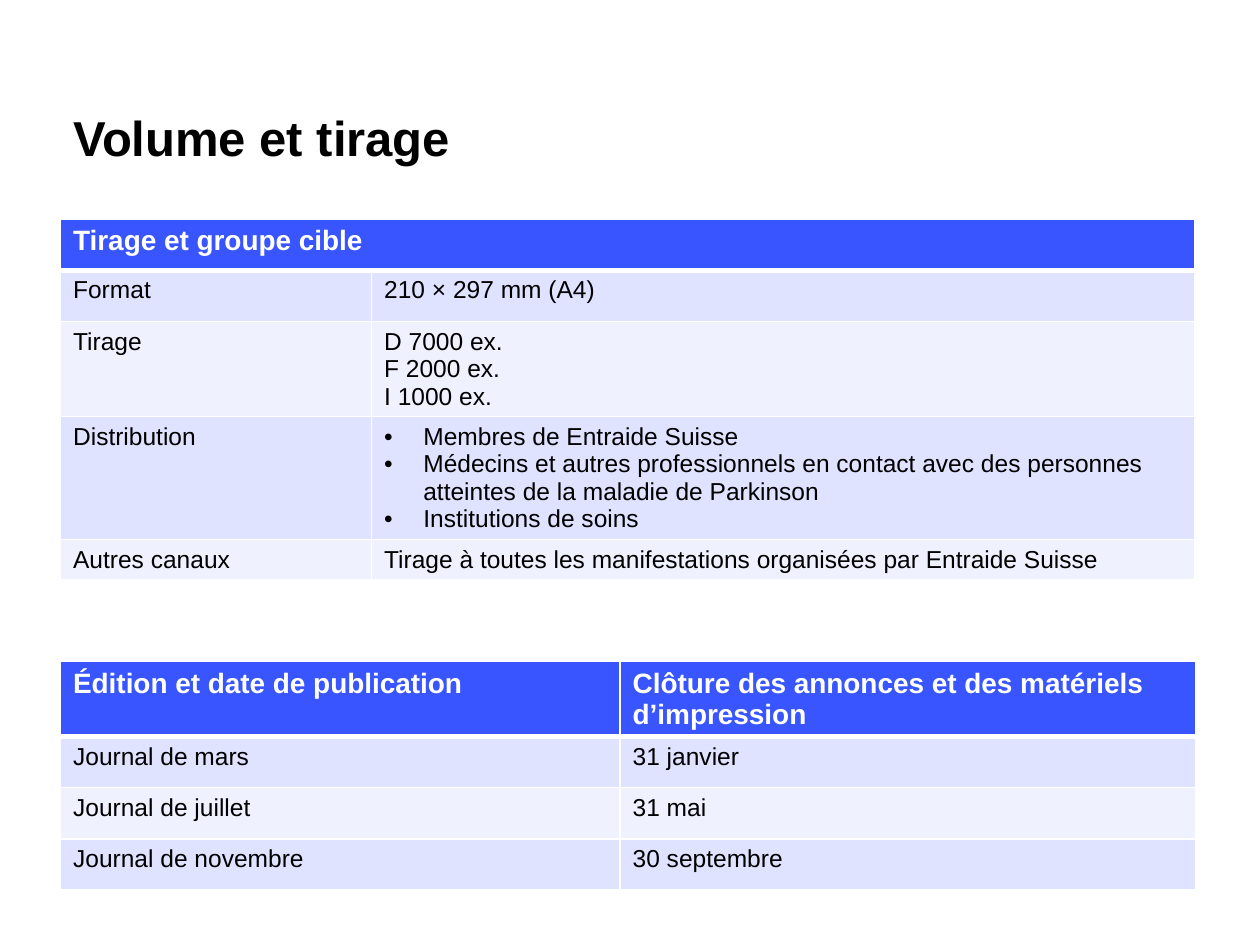
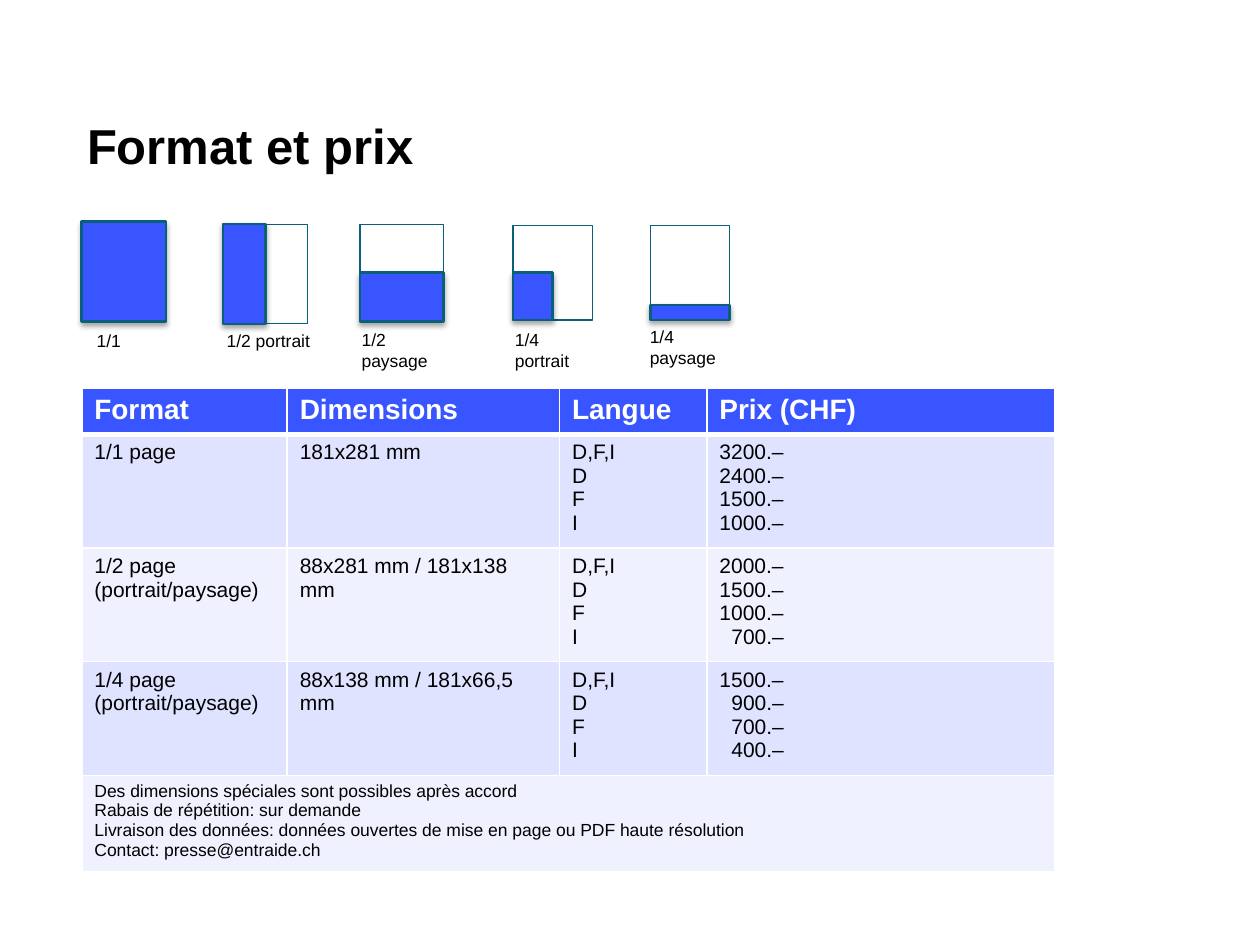
from lxml import etree
from pptx import Presentation
from pptx.dml.color import RGBColor
from pptx.enum.shapes import MSO_SHAPE
from pptx.enum.text import MSO_ANCHOR, MSO_AUTO_SIZE, PP_ALIGN
from pptx.oxml.ns import qn
from pptx.util import Cm, Pt

RECTANGLE = MSO_SHAPE.RECTANGLE
MIDDLE = MSO_ANCHOR.MIDDLE
NO_FIT = MSO_AUTO_SIZE.NONE
LEFT = PP_ALIGN.LEFT

FONT = "Arial"
BLACK, WHITE = "000000", "FFFFFF"
BLUE, TEAL = "3855FF", "0A607B"
BANDS = ("F0F1FF", "DFE3FF")
TITLE_ONLY = 5

CIRCULATION = [
    ["Tirage et groupe cible", ""],
    ["Format", "210 × 297 mm (A4)"],
    ["Tirage", "D 7000 ex.\nF 2000 ex.\nI 1000 ex."],
    ["Distribution",
     "•Membres de Entraide Suisse\n"
     "•Médecins et autres professionnels en contact avec des personnes "
     "atteintes de la maladie de Parkinson\n"
     "•Institutions de soins"],
    ["Autres canaux",
     "Tirage à toutes les manifestations organisées par Entraide Suisse"],
]
DEADLINES = [
    ["Édition et date de publication",
     "Clôture des annonces et des matériels d’impression"],
    ["Journal de mars", "31 janvier"],
    ["Journal de juillet", "31 mai"],
    ["Journal de novembre", "30 septembre"],
]
LANGUAGES = "D,F,I\nD\nF\nI"
PRICES = [
    ["Format", "Dimensions", "Langue", "Prix (CHF)"],
    ["1/1 page", "181x281 mm", LANGUAGES,
     "3200.–\n2400.–\n1500.–\n1000.–"],
    ["1/2 page (portrait/paysage)", "88x281 mm / 181x138 mm", LANGUAGES,
     "2000.–\n1500.–\n1000.–\n700.–"],
    ["1/4 page (portrait/paysage)", "88x138 mm / 181x66,5 mm", LANGUAGES,
     "1500.–\n900.–\n700.–\n400.–"],
    ["Des dimensions spéciales sont possibles après accord\n"
     "Rabais de répétition: sur demande\n"
     "Livraison des données: données ouvertes de mise en page ou PDF haute résolution\n"
     "Contact: presse@entraide.ch", "", "", ""],
]
# label, page box, share of the page taken by the advert, label left, top, width
AD_FORMATS = [
    ("1/1", (1.65, 4.47, 1.7, 2.01), (1, 1), (1.7, 6.53, 1.7)),
    ("1/2 portrait", (4.5, 4.52, 1.7, 2.01), (0.5, 1), (4.32, 6.53, 2.24)),
    ("1/2 paysage", (7.26, 4.52, 1.68, 1.96), (1, 0.5), (7.04, 6.5, 2.2)),
    ("1/4 portrait", (10.34, 4.55, 1.6, 1.9), (0.5, 0.5), (10.13, 6.5, 2.01)),
    ("1/4 paysage", (13.11, 4.55, 1.6, 1.9), (1, 0.16), (12.85, 6.45, 2.01)),
]


def color(value):
    return RGBColor.from_string(value)


def add_span(para, text, size, ink=BLACK, bold=False):
    span = para.add_run()
    span.text = text
    span.font.name = FONT
    span.font.size = Pt(size)
    span.font.bold = bold
    span.font.color.rgb = color(ink)


def set_indent(para, left, first=0):
    props = para._p.get_or_add_pPr()
    props.set("marL", str(Cm(left)))
    props.set("indent", str(Cm(first)))
    return props


def add_title_page(deck, text, left, top, width, height):
    page = deck.slides.add_slide(deck.slide_layouts[TITLE_ONLY])
    title = page.shapes.title
    title.left, title.top = Cm(left), Cm(top)
    title.width, title.height = Cm(width), Cm(height)
    frame = title.text_frame
    frame.auto_size = NO_FIT
    frame.vertical_anchor = MIDDLE
    para = frame.paragraphs[0]
    para.alignment = LEFT
    add_span(para, text, 28, bold=True)
    return page


# Tables
def set_borders(cell, top, bottom):
    props = cell._tc.get_or_add_tcPr()
    sides = {"a:lnL": 1, "a:lnR": 1, "a:lnT": top, "a:lnB": bottom}
    for place, (side, width) in enumerate(sides.items()):
        line = etree.Element(qn(side), w=str(Pt(width)))
        fill = etree.SubElement(line, qn("a:solidFill"))
        etree.SubElement(fill, qn("a:srgbClr"), val=WHITE)
        props.insert(place, line)


def fill_cell(cell, text, size, ink, bold):
    frame = cell.text_frame
    for number, line in enumerate(text.split("\n")):
        para = frame.add_paragraph() if number else frame.paragraphs[0]
        if line.startswith("•"):
            props = set_indent(para, 0.79, -0.79)
            etree.SubElement(props, qn("a:buFont"), typeface=FONT)
            etree.SubElement(props, qn("a:buChar"), char="•")
            line = line[1:]
        if line:
            add_span(para, line, size, ink, bold)


def add_grid(page, left, top, widths, heights, rows, size):
    frame = page.shapes.add_table(len(rows), len(widths), Cm(left), Cm(top),
                                  Cm(sum(widths)), Cm(sum(heights)))
    table = frame.table
    for column, width in zip(table.columns, widths):
        column.width = Cm(width)
    for index, (texts, height) in enumerate(zip(rows, heights)):
        table.rows[index].height = Cm(height)
        header = index == 0
        # A row with one text runs over the whole width
        full_width = not any(texts[1:])
        text_size = 16 if header else 10 if full_width else size
        for place, text in enumerate(texts):
            cell = table.cell(index, place)
            cell.fill.solid()
            cell.fill.fore_color.rgb = color(BLUE if header else BANDS[index % 2])
            set_borders(cell, 3 if index == 1 else 1, 3 if header else 1)
            fill_cell(cell, text, text_size, WHITE if header else BLACK, header)
        if full_width:
            table.cell(index, 0).merge(table.cell(index, len(widths) - 1))
    return table


def align_prices(table):
    for row in list(table.rows)[1:-1]:
        for para in row.cells[3].text_frame.paragraphs:
            if len(para.text) < len("1000.–"):
                set_indent(para, 0.24)


# Advert formats
def add_box(shapes, left, top, width, height, line_width, fill=None):
    box = shapes.add_shape(RECTANGLE, Cm(left), Cm(top), Cm(width), Cm(height))
    box.shadow.inherit = False
    box.line.color.rgb = color(TEAL)
    box.line.width = Pt(line_width)
    if fill:
        box.fill.solid()
        box.fill.fore_color.rgb = color(fill)
    else:
        box.fill.background()
    return box


def add_shadow(box):
    effects = box._element.spPr.find(qn("a:effectLst"))
    shadow = etree.SubElement(effects, qn("a:outerShdw"), blurRad=str(Pt(3.1)),
                              dist=str(Pt(1.8)), dir="5400000", rotWithShape="0")
    ink = etree.SubElement(shadow, qn("a:srgbClr"), val=BLACK)
    etree.SubElement(ink, qn("a:alpha"), val="35000")


def add_ad_format(page, label, sheet, share, label_place):
    left, top, width, height = sheet
    shapes = page.shapes
    if share != (1, 1):
        shapes = shapes.add_group_shape().shapes
        add_box(shapes, *sheet, 0.75)
    advert_height = height * share[1]
    advert = add_box(shapes, left, top + height - advert_height,
                     width * share[0], advert_height, 1.5, BLUE)
    add_shadow(advert)

    label_left, label_top, label_width = label_place
    box = page.shapes.add_textbox(Cm(label_left), Cm(label_top),
                                  Cm(label_width), Cm(0.69))
    box.text_frame.word_wrap = True
    add_span(box.text_frame.paragraphs[0], label, 10)


def main():
    deck = Presentation()
    deck.slide_width, deck.slide_height = Cm(25.4), Cm(19.05)

    # Print run and deadlines
    page = add_title_page(deck, "Volume et tirage", 1.22, 1.75, 17, 2)
    add_grid(page, 1.22, 4.42, [6.27, 16.59], [1.03, 1.03, 1.92, 2.47, 0.8],
             CIRCULATION, 14)
    add_grid(page, 1.22, 13.34, [11.28, 11.61], [1.5] + [1.03] * 3, DEADLINES, 14)

    # Formats and prices
    page = add_title_page(deck, "Format et prix", 1.5, 1.7, 17, 2.44)
    for ad_format in AD_FORMATS:
        add_ad_format(page, *ad_format)
    table = add_grid(page, 1.65, 7.82, [4.14, 5.49, 2.97, 7.01],
                     [0.94] + [2.29] * 3 + [1.91], PRICES, 12)
    align_prices(table)

    deck.save("out.pptx")


if __name__ == "__main__":
    main()
